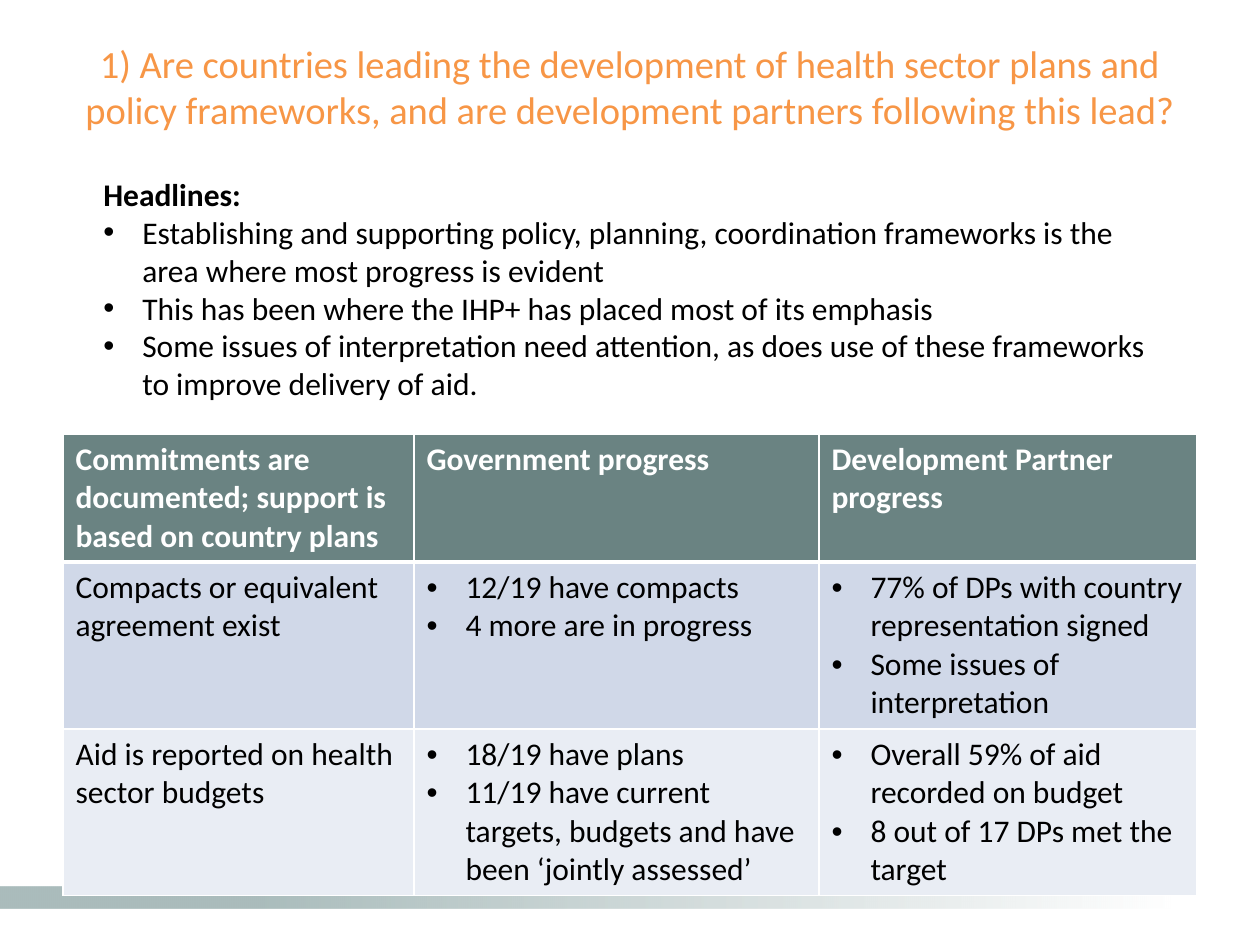
from lxml.etree import SubElement
from pptx import Presentation
from pptx.dml.color import RGBColor
from pptx.enum.shapes import MSO_SHAPE
from pptx.enum.text import MSO_ANCHOR, PP_ALIGN
from pptx.oxml.ns import qn
from pptx.util import Emu, Pt

PX_PER_INCH = 126
FONT = "Calibri"
ORANGE = RGBColor(0xF7, 0x96, 0x46)
BLACK = RGBColor(0x00, 0x00, 0x00)
WHITE = RGBColor(0xFF, 0xFF, 0xFF)
DARK_TEAL = RGBColor(0x1A, 0x4B, 0x4A)
HEADER_TEAL = RGBColor(0x6A, 0x83, 0x82)
BAND_BLUE = RGBColor(0xD0, 0xD8, 0xE8)
BAND_PALE = RGBColor(0xE9, 0xED, 0xF4)

TITLE = ("1) Are countries leading the development of health sector plans and "
         "policy frameworks, and are development partners following this lead?")
HEADLINES = [
    "Establishing and supporting policy, planning, coordination frameworks is the "
    "area where most progress is evident",
    "This has been where the IHP+ has placed most of its emphasis",
    "Some issues of interpretation need attention, as does use of these frameworks "
    "to improve delivery of aid.",
]
HEADER = ["Commitments are documented; support is based on country plans",
          "Government progress", "Development Partner progress"]
# Each row: commitment, government bullets, partner bullets
PROGRESS = [
    ("Compacts or equivalent agreement exist",
     ["12/19 have compacts", "4 more are in progress"],
     ["77% of DPs with country representation signed",
      "Some issues of interpretation"]),
    ("Aid is reported on health sector budgets",
     ["18/19 have plans",
      "11/19 have current targets, budgets and have been ‘jointly assessed’"],
     ["Overall 59% of aid recorded on budget", "8 out of 17 DPs met the target"]),
]
COLUMN_WIDTHS = [351, 405, 378]
ROW_HEIGHTS = [127, 167, 166]


def px(length):
    return Emu(round(length * 914400 / PX_PER_INCH))


def style(paragraph, color=BLACK, size=18, bold=False):
    font = paragraph.font
    font.name, font.size, font.bold = FONT, Pt(size), bold
    font.color.rgb = color


def add_bullet(paragraph):
    properties = paragraph._p.get_or_add_pPr()
    properties.set("marL", str(px(39)))
    properties.set("indent", str(-px(39)))
    SubElement(properties, qn("a:buFont"), typeface="Arial")
    SubElement(properties, qn("a:buChar"), char="•")


def fill_text(text_frame, texts, bulleted=False, **look):
    for index, text in enumerate(texts):
        paragraph = text_frame.paragraphs[0] if index == 0 else text_frame.add_paragraph()
        paragraph.text = text
        if bulleted:
            add_bullet(paragraph)
        style(paragraph, **look)


def add_footer_bar(slide, left, top, width, height):
    bar = slide.shapes.add_shape(MSO_SHAPE.RECTANGLE, px(left), px(top), px(width), px(height))
    bar.shadow.inherit = False
    bar.line.fill.background()
    bar.fill.gradient()
    bar.fill.gradient_angle = 0
    for stop, position, color in zip(bar.fill.gradient_stops, (0.22, 1), (DARK_TEAL, WHITE)):
        stop.position = position
        stop.color.rgb = color
    for color_element in bar._element.spPr.iter(qn("a:srgbClr")):
        SubElement(color_element, qn("a:alpha"), val="37000")


def set_title(slide, left, top, width, height):
    title = slide.shapes.title
    title.left, title.top, title.width, title.height = px(left), px(top), px(width), px(height)
    text_frame = title.text_frame
    text_frame.word_wrap = True
    text_frame.vertical_anchor = MSO_ANCHOR.MIDDLE
    text_frame.margin_bottom = px(52)  # lifts the text by half a line
    fill_text(text_frame, [TITLE], color=ORANGE, size=22)
    text_frame.paragraphs[0].alignment = PP_ALIGN.CENTER


def add_headlines(slide, left, top, width, height):
    box = slide.shapes.add_textbox(px(left), px(top), px(width), px(height))
    text_frame = box.text_frame
    text_frame.word_wrap = True
    fill_text(text_frame, ["Headlines:"], bold=True)
    for text in HEADLINES:
        paragraph = text_frame.add_paragraph()
        paragraph.text = text
        add_bullet(paragraph)
        style(paragraph)


def set_borders(cell, top, bottom):
    properties = cell._tc.get_or_add_tcPr()
    for tag, points in (("lnL", 1), ("lnR", 1), ("lnT", top), ("lnB", bottom)):
        line = SubElement(properties, qn(f"a:{tag}"), w=str(Pt(points)))
        SubElement(SubElement(line, qn("a:solidFill")), qn("a:srgbClr"), val=str(WHITE))


def add_progress_table(slide, left, top):
    rows = [HEADER, *PROGRESS]
    table = slide.shapes.add_table(
        len(rows), len(HEADER), px(left), px(top),
        px(sum(COLUMN_WIDTHS)), px(sum(ROW_HEIGHTS))).table
    for column, width in zip(table.columns, COLUMN_WIDTHS):
        column.width = px(width)
    for row, height in zip(table.rows, ROW_HEIGHTS):
        row.height = px(height)

    for row_index, (values, fill) in enumerate(zip(rows, (HEADER_TEAL, BAND_BLUE, BAND_PALE))):
        is_header = row_index == 0
        for column_index, value in enumerate(values):
            cell = table.cell(row_index, column_index)
            set_borders(cell, top=3 if row_index == 1 else 1, bottom=3 if is_header else 1)
            cell.fill.solid()
            cell.fill.fore_color.rgb = fill
            bulleted = isinstance(value, list)
            fill_text(cell.text_frame, value if bulleted else [value], bulleted,
                      color=WHITE if is_header else BLACK, bold=is_header)


def main():
    presentation = Presentation()
    presentation.slide_width, presentation.slide_height = px(1260), px(945)
    slide = presentation.slides.add_slide(presentation.slide_layouts[5])
    add_footer_bar(slide, 0, 887, 1171, 21)
    set_title(slide, 63, 30, 1134, 158)
    add_progress_table(slide, 63, 434)
    add_headlines(slide, 91, 169, 1086, 242)
    presentation.save("out.pptx")


if __name__ == "__main__":
    main()
